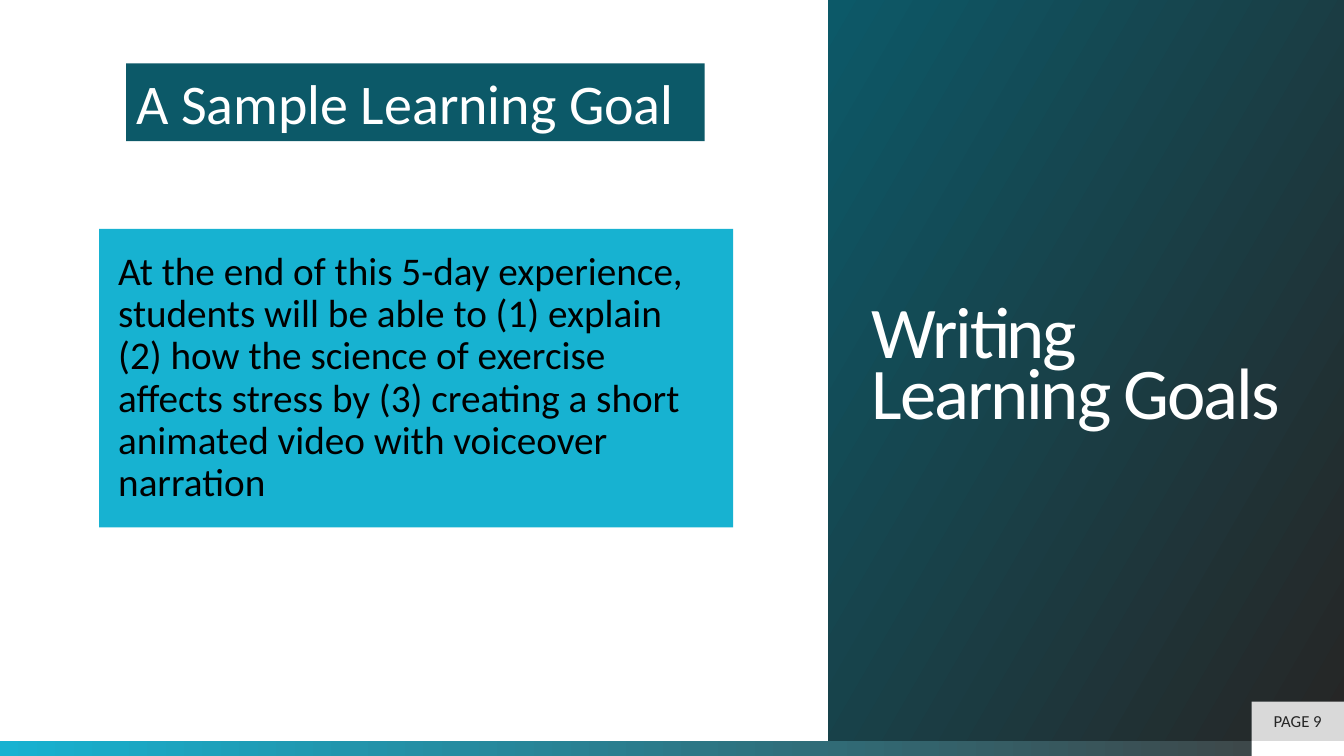
from dataclasses import dataclass

from pptx import Presentation
from pptx.dml.color import RGBColor
from pptx.enum.shapes import MSO_SHAPE
from pptx.enum.text import MSO_ANCHOR, MSO_AUTO_SIZE, PP_ALIGN
from pptx.util import Cm, Pt

RECTANGLE = MSO_SHAPE.RECTANGLE
TOP, MIDDLE = MSO_ANCHOR.TOP, MSO_ANCHOR.MIDDLE
LEFT, CENTER = PP_ALIGN.LEFT, PP_ALIGN.CENTER
NO_FIT = MSO_AUTO_SIZE.NONE

TITLE_ONLY = 5
PAGE_WIDTH, PAGE_HEIGHT = 33.87, 19.05
BAR_TOP = 18.67
PANEL_LEFT = 20.87
TAB_LEFT, TAB_TOP = 31.54, 17.68


@dataclass(frozen=True)
class Theme:
    font: str = "Calibri"
    white: str = "FFFFFF"
    black: str = "000000"
    ink: str = "262626"
    grey: str = "404040"
    light: str = "D9D9D9"
    teal: str = "0C5968"
    cyan: str = "17B2D1"
    title_size: int = 52
    heading_size: int = 40
    body_size: int = 28
    page_size: int = 12


class SlideBuilder:
    def __init__(self, slide, theme):
        self.slide = slide
        self.theme = theme

    def place(self, shape, left, top, width, height):
        shape.left, shape.top = Cm(left), Cm(top)
        shape.width, shape.height = Cm(width), Cm(height)

    def fill_gradient(self, shape, stops, angle):
        """Fill with (position, colour) stops; the angle runs counter-clockwise."""
        shape.fill.gradient()
        shape.fill.gradient_angle = angle
        for stop, (position, color) in zip(shape.fill.gradient_stops, stops):
            stop.position = position
            stop.color.rgb = RGBColor.from_string(color)

    def set_text(self, shape, text, size, color, align=LEFT, anchor=TOP,
                 side_inset=0.25, line_spacing=1.0):
        frame = shape.text_frame
        frame.text = text
        frame.word_wrap = True
        frame.auto_size = NO_FIT
        frame.vertical_anchor = anchor
        frame.margin_left = frame.margin_right = Cm(side_inset)
        frame.margin_top = frame.margin_bottom = Cm(0.13)
        para = frame.paragraphs[0]
        para.alignment = align
        para.line_spacing = line_spacing
        span = para.runs[0]
        span.font.name = self.theme.font
        span.font.size = Pt(size)
        span.font.color.rgb = RGBColor.from_string(color)
        return span

    def box(self, left, top, width, height, color):
        box = self.slide.shapes.add_shape(
            RECTANGLE, Cm(left), Cm(top), Cm(width), Cm(height))
        box.shadow.inherit = False
        box.line.fill.background()
        box.fill.solid()
        box.fill.fore_color.rgb = RGBColor.from_string(color)
        return box

    def title_panel(self, text):
        theme = self.theme
        panel = self.slide.shapes.title
        self.place(panel, PANEL_LEFT, 0, PAGE_WIDTH - PANEL_LEFT, BAR_TOP)
        self.fill_gradient(panel, [(0.01, theme.ink), (1, theme.teal)], 150)
        span = self.set_text(panel, text, theme.title_size, theme.white,
                             anchor=MIDDLE, side_inset=1.1, line_spacing=0.7)
        span.font._element.set("spc", "-150")

    def footer(self, page_text):
        theme = self.theme
        tab_width = PAGE_WIDTH - TAB_LEFT
        bar_height = PAGE_HEIGHT - BAR_TOP
        bar = self.box(0, BAR_TOP, PAGE_WIDTH, bar_height, theme.cyan)
        self.fill_gradient(bar, [(0, theme.cyan), (1, theme.grey)], 0)
        self.box(TAB_LEFT, BAR_TOP, tab_width, bar_height, theme.white)
        tab = self.box(TAB_LEFT, TAB_TOP, tab_width, BAR_TOP - TAB_TOP, theme.light)
        self.set_text(tab, page_text, theme.page_size, theme.ink, CENTER, MIDDLE)

    def goal(self, text):
        theme = self.theme
        box = self.box(2.5, 5.77, 15.98, 7.52, theme.cyan)
        self.set_text(box, text, theme.body_size, theme.black, anchor=MIDDLE,
                      side_inset=0.48, line_spacing=0.9)

    def heading(self, text):
        theme = self.theme
        box = self.box(3.18, 1.6, 14.58, 1.96, theme.teal)
        self.set_text(box, text, theme.heading_size, theme.white)


def main():
    deck = Presentation()
    deck.slide_width, deck.slide_height = Cm(PAGE_WIDTH), Cm(PAGE_HEIGHT)
    page = SlideBuilder(
        deck.slides.add_slide(deck.slide_layouts[TITLE_ONLY]), Theme())
    page.title_panel("Writing Learning Goals")
    page.footer("PAGE 9")
    page.goal("At the end of this 5-day experience, students will be able to "
              "(1) explain (2) how the science of exercise affects stress by "
              "(3) creating a short animated video with voiceover narration")
    page.heading("A Sample Learning Goal")
    deck.save("out.pptx")


if __name__ == "__main__":
    main()
